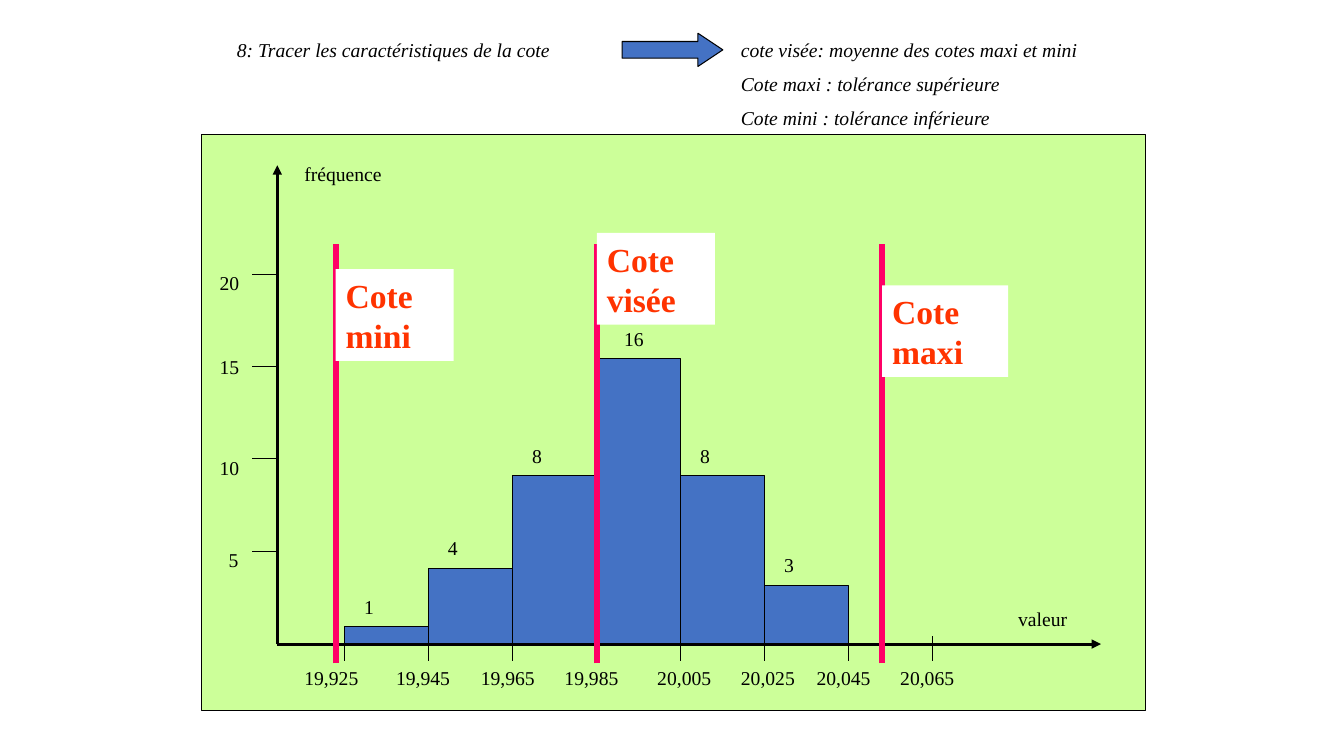
import dataclasses
import pptx
import pptx.chart.data
import pptx.dml.color
import pptx.enum.shapes
import pptx.enum.text
import pptx.oxml
import pptx.oxml.ns
import pptx.util

Inches = pptx.util.Inches
Pt = pptx.util.Pt
Shape = pptx.enum.shapes.MSO_SHAPE
Anchor = pptx.enum.text.MSO_ANCHOR

BLACK, WHITE, BLUE, GREEN = "000000", "FFFFFF", "4472C4", "CCFF99"
PINK, RED = "FF0066", "FF3300"
AXIS, BASE = 2.75, 6.39
START, STEP = 3.42, 5 / 6


@dataclasses.dataclass
class Bar:
    count: str
    height: float
    shift: float = 0.17


@dataclasses.dataclass
class Mark:
    """A label at one inch position along an axis."""
    text: str
    pos: float


@dataclasses.dataclass
class Limit:
    text: str
    left: float
    top: float
    width: float = 1.17


BARS = [Bar("1", 0.17), Bar("4", 0.75), Bar("8", 1.67),
        Bar("16", 2.83, 0.25), Bar("8", 1.67), Bar("3", 0.58)]
COUNTS = [Mark("5", 5.39), Mark("10", 4.47), Mark("15", 3.47), Mark("20", 2.64)]
SIZES = [Mark("19,925", 2.92), Mark("19,945", 3.83), Mark("19,965", 4.67),
         Mark("19,985", 5.5), Mark("20,005", 6.42), Mark("20,025", 7.25),
         Mark("20,045", 8), Mark("20,065", 8.83)]
LIMITS = [Limit("Cote mini", 3.33, 2.67), Limit("Cote maxi", 8.75, 2.83, 1.25),
          Limit("Cote visée", 5.92, 2.31)]

deck = pptx.Presentation()
deck.slide_width, deck.slide_height = Inches(13.33), Inches(7.5)
slide = deck.slides.add_slide(deck.slide_layouts[6])


def color(code: str) -> pptx.dml.color.RGBColor:
    return pptx.dml.color.RGBColor.from_string(code)


def shape(kind: Shape, left: float, top: float, width: float, height: float,
          fill: str):
    item = slide.shapes.add_shape(
        kind, Inches(left), Inches(top), Inches(width), Inches(height))
    item.shadow.inherit = False
    item.fill.solid()
    item.fill.fore_color.rgb = color(fill)
    item.line.color.rgb = color(BLACK)
    item.line.width = Pt(0.75)
    return item


def line(x1: float, y1: float, x2: float, y2: float, ink: str = BLACK,
         width: float = 0.75, arrow: bool = False) -> None:
    item = slide.shapes.add_connector(
        pptx.enum.shapes.MSO_CONNECTOR.STRAIGHT,
        Inches(x1), Inches(y1), Inches(x2), Inches(y2))
    item.line.color.rgb = color(ink)
    item.line.width = Pt(width)
    if arrow:
        item.line._get_or_add_ln().append(pptx.oxml.parse_xml(
            f'<a:tailEnd {pptx.oxml.ns.nsdecls("a")} type="triangle"/>'))
    item._element.spPr.append(pptx.oxml.parse_xml(
        f'<a:effectLst {pptx.oxml.ns.nsdecls("a")}/>'))


def text(lines: list[str], left: float, top: float, width: float,
         height: float = 0.34, size: float = 14, ink: str = BLACK,
         bold: bool = False, italic: bool = False, tight: bool = False):
    box = slide.shapes.add_textbox(
        Inches(left), Inches(top), Inches(width), Inches(height))
    frame = box.text_frame
    frame.word_wrap = True
    if tight:
        frame.margin_left = frame.margin_right = Inches(0.02)
        frame.margin_top = frame.margin_bottom = Inches(0.01)
    frame.text = "\n".join(lines)
    for i, para in enumerate(frame.paragraphs):
        if i:
            para.space_before = Pt(7.5)
        font = para.font
        font.name, font.size = "Times New Roman", Pt(size)
        font.bold, font.italic = bold, italic
        font.color.rgb = color(ink)
    return box


def header() -> None:
    text(["8: Tracer les caractéristiques de la cote"], 2.25, 0.33, 3.58,
         italic=True)
    arrow = shape(Shape.RIGHT_ARROW, 6.17, 0.33, 1, 0.33, BLUE)
    arrow.adjustments[0], arrow.adjustments[1] = 0.5, 0.75
    text(["cote visée: moyenne des cotes maxi et mini",
          "Cote maxi : tolérance supérieure",
          "Cote mini : tolérance inférieure"], 7.25, 0.33, 4, 1.04, italic=True)


def plot() -> None:
    shape(Shape.RECTANGLE, 2, 1.33, 9.36, 5.72, GREEN)
    line(AXIS, BASE, AXIS, 1.64, width=2.25, arrow=True)
    text(["fréquence"], 2.92, 1.56, 1.17)
    for i, mark in enumerate(COUNTS):
        tick = 5.47 - i * 11 / 12
        line(2.5, tick, AXIS, tick)
        left = 2.08 if len(mark.text) > 1 else 2.17
        text([mark.text], left, mark.pos, 2.5 - left)
    for i, bar in enumerate(BARS):
        left, top = START + i * STEP, BASE - bar.height
        shape(Shape.RECTANGLE, left, top, STEP, bar.height, BLUE)
        text([bar.count], left + bar.shift, top - 0.33, 0.42, 0.26, tight=True)
    line(AXIS, BASE, 10.92, BASE, width=2.25, arrow=True)
    for i, mark in enumerate(SIZES):
        tick = START + i * STEP
        line(tick, 6.31, tick, 6.56)
        text([mark.text], mark.pos, 6.56, 0.75)
    text(["valeur"], 10, 5.97, 0.75)


def limits() -> None:
    for limit in LIMITS:
        line(limit.left, 6.58, limit.left, 2.42, PINK, 4.5)
        box = text([limit.text], limit.left, limit.top, limit.width, 0.91,
                   24, RED, bold=True)
        box.fill.solid()
        box.fill.fore_color.rgb = color(WHITE)
        box.text_frame.vertical_anchor = Anchor.MIDDLE


def main() -> None:
    header()
    plot()
    limits()
    deck.save("out.pptx")


if __name__ == "__main__":
    main()
